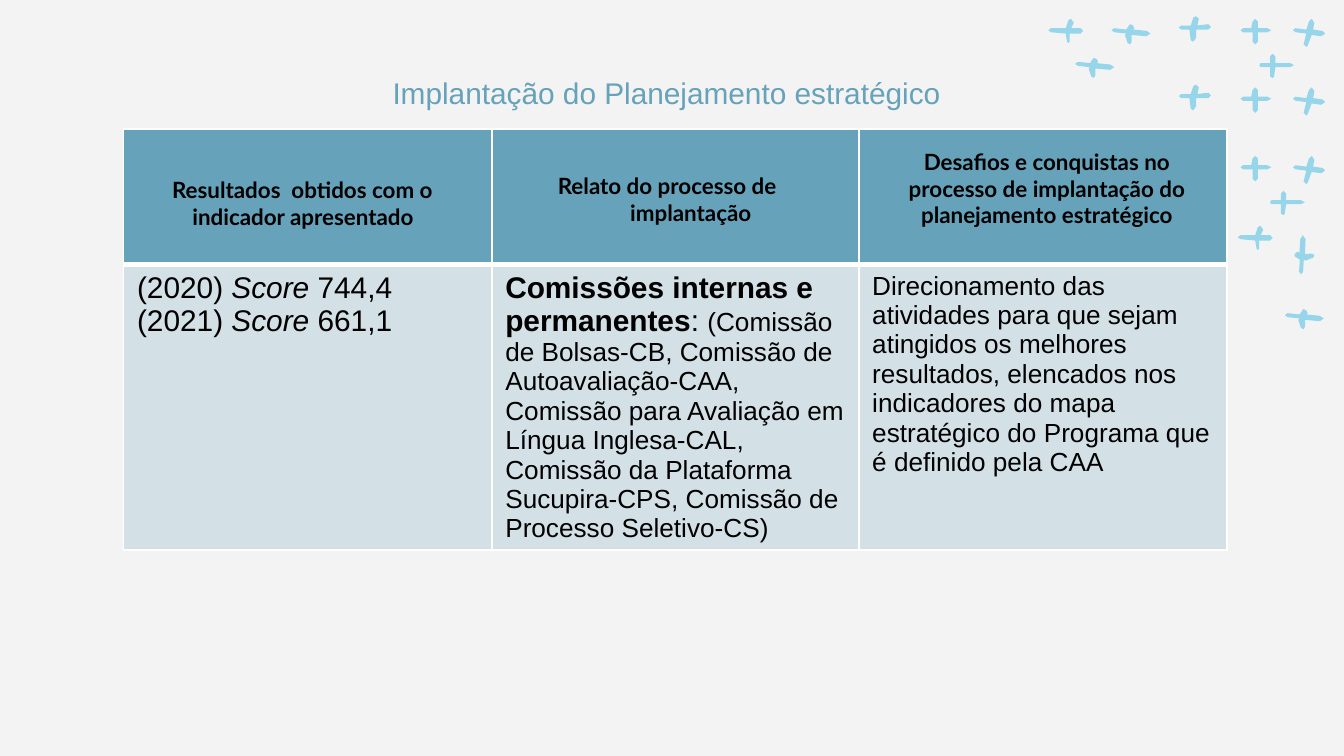
from dataclasses import dataclass

from lxml import etree
from pptx import Presentation, util as u
from pptx.dml import color
from pptx.enum import text
from pptx.oxml import ns


@dataclass(frozen=True)
class Theme:
    background: str = "F3F3F3"
    accent: str = "66A2B9"
    pale: str = "D3E0E6"
    sparkle: str = "97D5EA"
    rule: str = "FFFFFF"
    ink: str = "000000"
    body_font: str = "Arial"
    header_font: str = "Lato"
    large: int = 16
    medium: int = 14
    small: int = 12


@dataclass(frozen=True)
class Run:
    words: str
    size: int
    bold: bool = False
    italic: bool = False


@dataclass(frozen=True)
class Header:
    words: str
    left: float
    top: float
    width: float
    height: float
    margin: float = 0
    indent: float = 0


@dataclass(frozen=True)
class Cross:
    outline: list
    left: float
    top: float
    rotation: float = 0


THEME = Theme()

# Hand-drawn cross outlines, in hundredths of an inch from their top left
FLAT = [(14, 0), (13, 1), (11, 4), (2, 3), (0, 4.5), (2, 6), (11, 7), (10, 8), (12, 14),
        (14, 15), (15, 13), (15, 8), (26, 9), (29, 7), (26, 5), (16, 4), (17, 3), (16, 1)]
LEANING = [(13, 0), (11, 1), (9, 7), (2, 7), (0, 8.5), (2, 10), (8, 10), (9, 18),
           (11, 19), (13, 16), (13, 10), (22, 10), (24, 8), (22, 6), (14, 7), (15, 2)]
UPRIGHT = [(11, 0), (9, 2), (8, 7), (2, 7), (0, 8.5), (2, 10), (9, 10), (9, 17),
           (11, 19), (13, 17), (13, 10), (20, 10), (23, 8.5), (20, 7), (13, 7), (13, 2)]
TILTED = [(14, 0), (12, 2), (10, 8), (2, 7), (0, 8.5), (2, 10), (10, 11), (8, 19),
          (10, 21), (11, 20), (14, 12), (21, 13), (24, 11), (22, 9), (15, 8), (16, 3)]
LONG_RIGHT = [(10, 0), (8, 2), (8, 7), (1, 7), (0, 8.5), (1, 10), (8, 10), (8, 17),
              (10, 18), (11, 17), (12, 10), (23, 10), (26, 8.5), (23, 7), (12, 7), (12, 2)]
LONG_LEFT = [(17, 0), (15, 1), (13, 7), (2, 7), (0, 8.5), (2, 10), (13, 11), (14, 17),
             (15, 18), (16, 17), (16, 11), (24, 11), (26, 9), (24, 7), (17, 7), (19, 3)]

ROW_STEP = 0.51
CROSSES = [
    Cross(outline, left, top + row * ROW_STEP)
    for outline, left, top in [(LEANING, 8.77, 0.12), (UPRIGHT, 9.23, 0.14), (TILTED, 9.62, 0.14)]
    for row in range(3)
] + [
    Cross(FLAT, 8.27, 0.18), Cross(FLAT, 8, 0.43),
    Cross(FLAT, 9.56, 1.82, 267.3), Cross(FLAT, 9.56, 2.3),
    Cross(LONG_RIGHT, 9.37, 0.4), Cross(LONG_RIGHT, 9.45, 1.42),
    Cross(LONG_LEFT, 7.8, 0.14), Cross(LONG_LEFT, 9.21, 1.68),
]

HEADERS = [
    Header("Resultados  obtidos com o indicador apresentado", 0.92, 1.21, 2.58, 0.54, 0.09, -0.01),
    Header("Relato do processo de implantação", 3.47, 1.18, 2.84, 0.39, 0.5, -0.35),
    Header("Desafios e conquistas no processo de implantação do planejamento estratégico",
           6.5, 1, 2.58, 0.54),
]

SCORES = [("2020", "744,4"), ("2021", "661,1")]
FINDINGS = [
    [[Run(f"({year}) ", THEME.large), Run("Score", THEME.large, italic=True),
      Run(f" {score}", THEME.large)] for year, score in SCORES],
    [[Run("Comissões internas e permanentes", THEME.large, bold=True), Run(": ", THEME.large),
      Run("(Comissão de Bolsas-CB, Comissão de Autoavaliação-CAA, Comissão para Avaliação em "
          "Língua Inglesa-CAL, Comissão da Plataforma Sucupira-CPS, Comissão de Processo "
          "Seletivo-CS)", THEME.medium)]],
    [[Run("Direcionamento das atividades para que sejam atingidos os melhores resultados, "
          "elencados nos indicadores do mapa estratégico do Programa que é definido pela CAA",
          THEME.medium)]],
]


def paint(fill, shade: str) -> None:
    fill.solid()
    fill.fore_color.rgb = color.RGBColor.from_string(shade)


def add_run(paragraph, run: Run, family: str, shade: str) -> None:
    piece = paragraph.add_run()
    piece.text = run.words
    font = piece.font
    font.name, font.size = family, u.Pt(run.size)
    font.bold, font.italic = run.bold, run.italic
    font.color.rgb = color.RGBColor.from_string(shade)


def set_insets(frame, inset: float) -> None:
    frame.word_wrap = True
    frame.margin_left = frame.margin_right = u.Inches(inset)
    frame.margin_top = frame.margin_bottom = u.Inches(inset)


def draw_cross(slide, cross: Cross) -> None:
    corners = [(u.Inches(cross.left + x / 100), u.Inches(cross.top + y / 100))
               for x, y in cross.outline]
    builder = slide.shapes.build_freeform(*corners[0])
    builder.add_line_segments(corners[1:], close=True)
    sparkle = builder.convert_to_shape()
    sparkle.rotation = cross.rotation
    sparkle.shadow.inherit = False
    paint(sparkle.fill, THEME.sparkle)
    sparkle.line.fill.background()


def draw_title(slide) -> None:
    title = slide.shapes.title
    title.left, title.top = u.Inches(2.8), u.Inches(0.18)
    title.width, title.height = u.Inches(4.44), u.Inches(0.74)
    frame = title.text_frame
    set_insets(frame, 0.1)
    frame.margin_right = u.Inches(0.22)
    frame.vertical_anchor = text.MSO_ANCHOR.BOTTOM
    paragraph = frame.paragraphs[0]
    paragraph.alignment = text.PP_ALIGN.CENTER
    add_run(paragraph, Run("Implantação do Planejamento estratégico", THEME.large),
            THEME.body_font, THEME.accent)


def style_cell(cell, shade: str, top: float, bottom: float) -> None:
    # Borders come before the fill in the cell properties
    properties = cell._tc.get_or_add_tcPr()
    for side, points in (("L", 1), ("R", 1), ("T", top), ("B", bottom)):
        border = etree.SubElement(properties, ns.qn(f"a:ln{side}"), w=str(u.Pt(points)))
        solid = etree.SubElement(border, ns.qn("a:solidFill"))
        etree.SubElement(solid, ns.qn("a:srgbClr"), val=THEME.rule)
    paint(cell.fill, shade)


def draw_table(slide) -> None:
    widths, heights = [2.74, 2.73, 2.74], [1.01, 2.12]
    table = slide.shapes.add_table(
        2, 3, u.Inches(0.92), u.Inches(0.96),
        u.Inches(sum(widths)), u.Inches(sum(heights))).table
    for column, width in zip(table.columns, widths):
        column.width = u.Inches(width)
    for row, height in zip(table.rows, heights):
        row.height = u.Inches(height)
    for index, paragraphs in enumerate(FINDINGS):
        style_cell(table.cell(0, index), THEME.accent, 1, 3)
        finding = table.cell(1, index)
        style_cell(finding, THEME.pale, 3, 1)
        frame = finding.text_frame
        for number, runs in enumerate(paragraphs):
            paragraph = frame.add_paragraph() if number else frame.paragraphs[0]
            for run in runs:
                add_run(paragraph, run, THEME.body_font, THEME.ink)


def draw_header(slide, header: Header) -> None:
    frame = slide.shapes.add_textbox(
        u.Inches(header.left), u.Inches(header.top),
        u.Inches(header.width), u.Inches(header.height)).text_frame
    set_insets(frame, 0.1)
    paragraph = frame.paragraphs[0]
    paragraph.alignment = text.PP_ALIGN.CENTER
    properties = paragraph._p.get_or_add_pPr()
    properties.set("marL", str(u.Inches(header.margin)))
    properties.set("indent", str(u.Inches(header.indent)))
    add_run(paragraph, Run(header.words, THEME.small, bold=True), THEME.header_font, THEME.ink)


def main() -> None:
    deck = Presentation()
    # Widescreen, 16 by 9
    deck.slide_width = u.Inches(10)
    deck.slide_height = u.Inches(10 * 9 / 16)
    slide = deck.slides.add_slide(deck.slide_layouts[5])
    paint(slide.background.fill, THEME.background)

    # Decoration in the top right corner
    for cross in CROSSES:
        draw_cross(slide, cross)

    # Title, table and the headings over its first row
    draw_title(slide)
    draw_table(slide)
    for header in HEADERS:
        draw_header(slide, header)
    deck.save("out.pptx")


if __name__ == "__main__":
    main()
